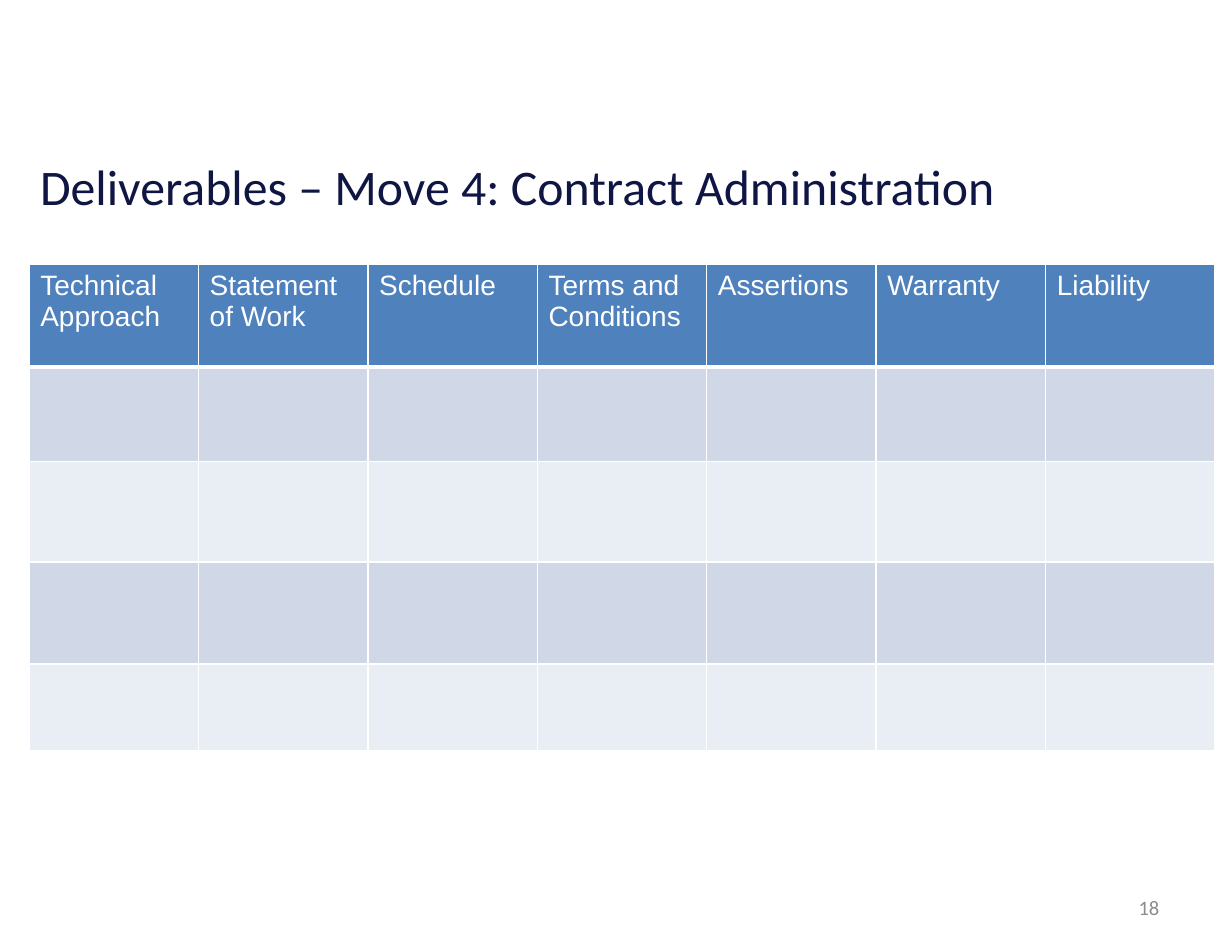
"""Build the contract administration deliverables slide."""
from lxml import etree
from pptx import Presentation
from pptx.dml.color import RGBColor
from pptx.enum.text import MSO_ANCHOR, PP_ALIGN
from pptx.oxml.ns import qn
from pptx.util import Inches, Pt

MIDDLE = MSO_ANCHOR.MIDDLE
LEFT, RIGHT = PP_ALIGN.LEFT, PP_ALIGN.RIGHT

TITLE = "Deliverables – Move 4: Contract Administration"
PAGE_NUMBER = "18"
HEADINGS = ["Technical Approach", "Statement of Work", "Schedule",
            "Terms and Conditions", "Assertions", "Warranty", "Liability"]
ROW_HEIGHTS = [0.92, 0.84, 0.9, 0.91, 0.77]
TABLE_LEFT, TABLE_TOP, TABLE_WIDTH = 0.26, 2.36, 10.59
COLORS = {"title": "101643", "number": "8C8C8C", "white": "FFFFFF",
          "header": "4F81BD", "odd": "D0D8E8", "even": "E9EDF4"}


def style(para, font_name, size, color):
    for span in para.runs:
        span.font.name = font_name
        span.font.size = Pt(size)
        span.font.bold = False
        span.font.color.rgb = RGBColor.from_string(COLORS[color])


def add_text(page, text, place, size, color, align):
    box = page.shapes.add_textbox(*map(Inches, place))
    frame = box.text_frame
    frame.word_wrap = True
    frame.vertical_anchor = MIDDLE
    frame.text = text
    para = frame.paragraphs[0]
    para.alignment = align
    style(para, "Calibri", size, color)


def add_borders(cell, bottom_width):
    properties = cell._tc.get_or_add_tcPr()
    for side, width in (("L", 1), ("R", 1), ("T", 1), ("B", bottom_width)):
        line = etree.SubElement(properties, qn(f"a:ln{side}"), w=str(Pt(width)))
        fill = etree.SubElement(line, qn("a:solidFill"))
        etree.SubElement(fill, qn("a:srgbClr"), val=COLORS["white"])


def add_deliverables(page):
    frame = page.shapes.add_table(
        len(ROW_HEIGHTS), len(HEADINGS), Inches(TABLE_LEFT), Inches(TABLE_TOP),
        Inches(TABLE_WIDTH), Inches(sum(ROW_HEIGHTS)))
    table = frame.table
    for column in table.columns:
        column.width = Inches(TABLE_WIDTH / len(HEADINGS))
    for index, height in enumerate(ROW_HEIGHTS):
        row = table.rows[index]
        row.height = Inches(height)
        color = "header" if index == 0 else "odd" if index % 2 else "even"
        for cell in row.cells:
            add_borders(cell, 3 if index == 0 else 1)
            cell.fill.solid()
            cell.fill.fore_color.rgb = RGBColor.from_string(COLORS[color])
    for cell, heading in zip(table.rows[0].cells, HEADINGS):
        cell.text_frame.text = heading
        style(cell.text_frame.paragraphs[0], "Arial", 18, "white")


def main():
    deck = Presentation()
    deck.slide_width, deck.slide_height = Inches(11), Inches(8.5)
    page = deck.slides.add_slide(deck.slide_layouts[6])
    add_text(page, TITLE, (0.26, 1.05, 9.9, 1.21), 32, "title", LEFT)
    add_text(page, PAGE_NUMBER, (7.88, 7.88, 2.57, 0.45), 13.2, "number", RIGHT)
    add_deliverables(page)
    deck.save("out.pptx")


if __name__ == "__main__":
    main()
